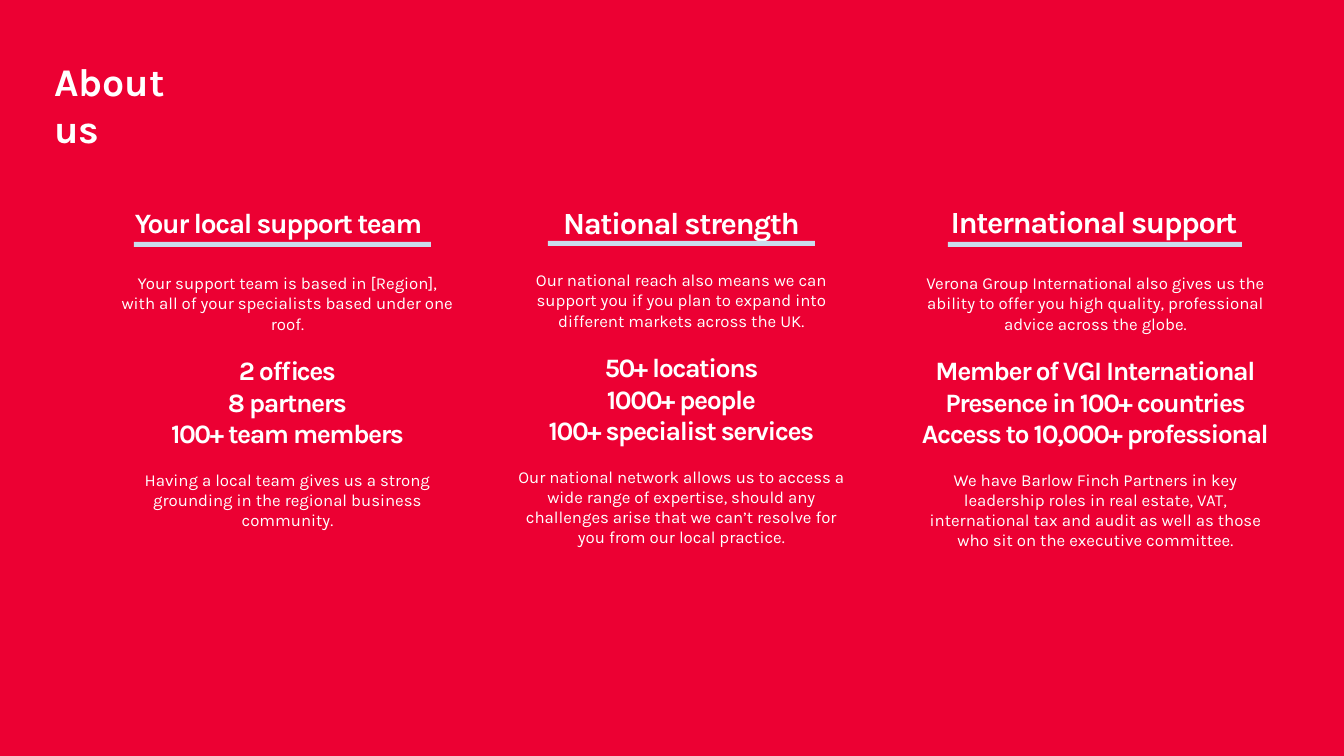
from pptx import Presentation
from pptx.dml.color import RGBColor
from pptx.enum.shapes import MSO_SHAPE
from pptx.enum.text import MSO_ANCHOR, MSO_AUTO_SIZE, PP_ALIGN
from pptx.util import Emu, Pt

RED = RGBColor(0xEC, 0x00, 0x33)
WHITE = RGBColor(0xFF, 0xFF, 0xFF)
PALE_BLUE = RGBColor(0xCB, 0xDD, 0xED)
FONT = "Karla"


def px(*lengths):
    """Turn pixels (100.8 to the inch) into EMU."""
    return [Emu(round(n * 914400 / 100.8)) for n in lengths]


def write(sp, lines, align=PP_ALIGN.CENTER):
    """Fill a shape with (text, size, bold, tight, space before) lines."""
    tf = sp.text_frame
    tf.word_wrap = True
    tf.auto_size = MSO_AUTO_SIZE.SHAPE_TO_FIT_TEXT
    tf.vertical_anchor = MSO_ANCHOR.TOP
    for i, (text, size, bold, tight, gap) in enumerate(lines):
        p = tf.paragraphs[0] if i == 0 else tf.add_paragraph()
        p.alignment = align
        if gap:
            p.space_before = Pt(gap)
        r = p.add_run()
        r.text = text
        if tight:
            r.font._element.set("spc", "-100")
        p.font.name = r.font.name = FONT
        p.font.size = r.font.size = Pt(size)
        p.font.bold = r.font.bold = bold
        p.font.color.rgb = r.font.color.rgb = WHITE


prs = Presentation()
prs.slide_width, prs.slide_height = px(1344, 756)
s = prs.slides.add_slide(prs.slide_layouts[5])
s.background.fill.solid()
s.background.fill.fore_color.rgb = RED

title = s.shapes.title
title.left, title.top, title.width, title.height = px(44, 52, 181, 57)
write(title, [("About us", 28, True, False, 0)], PP_ALIGN.LEFT)

# heading, size, alignment, heading box, underline, body box, intro, facts, closing
columns = [
    ("Your local support team", 20, PP_ALIGN.LEFT,
     (125, 201, 324, 44), (134, 242, 297, 5), (111, 268, 353, 270),
     "Your support team is based in [Region], with all of your specialists "
     "based under one roof.",
     ["2 offices", "8 partners", "100+ team members"],
     "Having a local team gives us a strong grounding in the regional "
     "business community."),
    ("National strength", 22, PP_ALIGN.CENTER,
     (548, 199, 267, 47), (548, 241, 267, 5), (501, 265, 361, 310),
     "Our national reach also means we can support you if you plan to expand "
     "into different markets across the UK.",
     ["50+ locations", "1000+ people", "100+ specialist services"],
     "Our national network allows us to access a wide range of expertise, "
     "should any challenges arise that we can’t resolve for you from our "
     "local practice."),
    ("International support", 22, PP_ALIGN.CENTER,
     (940, 198, 308, 47), (948, 242, 294, 5), (910, 268, 371, 323),
     "Verona Group International also gives us the ability to offer you high "
     "quality, professional advice across the globe.",
     ["Member of VGI International", "Presence in 100+ countries",
      "Access to 10,000+ professional"],
     "We have Barlow Finch Partners in key leadership roles in real estate, "
     "VAT, international tax and audit as well as those who sit on the "
     "executive committee."),
]

for (heading, size, align, heading_box, line_box, body_box,
     intro, facts, closing) in columns:
    write(s.shapes.add_textbox(*px(*heading_box)),
          [(heading, size, True, True, 0)], align)

    underline = s.shapes.add_shape(MSO_SHAPE.RECTANGLE, *px(*line_box))
    underline.shadow.inherit = False
    underline.fill.solid()
    underline.fill.fore_color.rgb = PALE_BLUE
    underline.line.fill.background()

    lines = [(intro, 12, False, False, 0)]
    lines += [(fact, 19, True, True, 0 if i else 14.4)
              for i, fact in enumerate(facts)]
    lines.append((closing, 12, False, False, 14.4))
    write(s.shapes.add_textbox(*px(*body_box)), lines)

prs.save("out.pptx")
